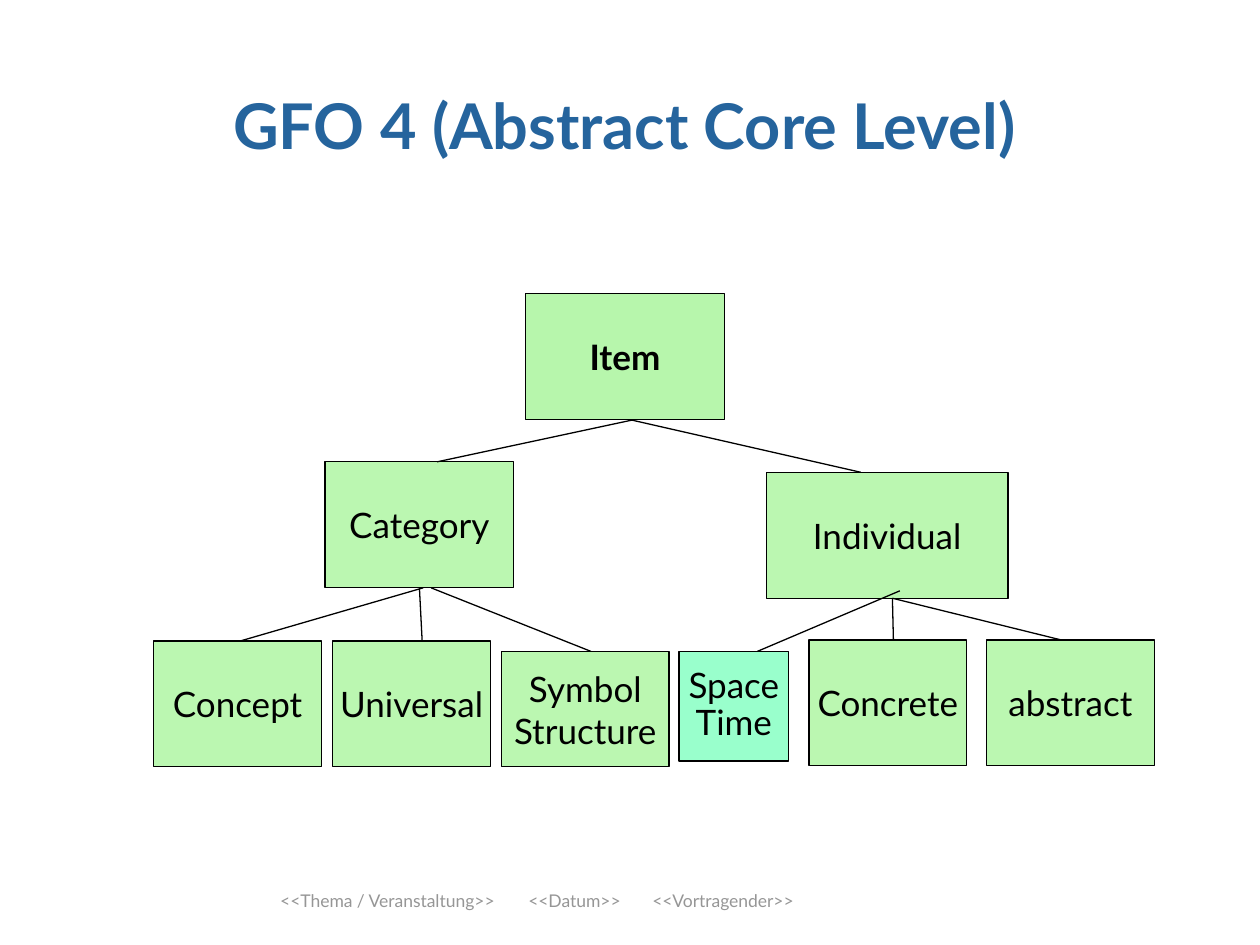
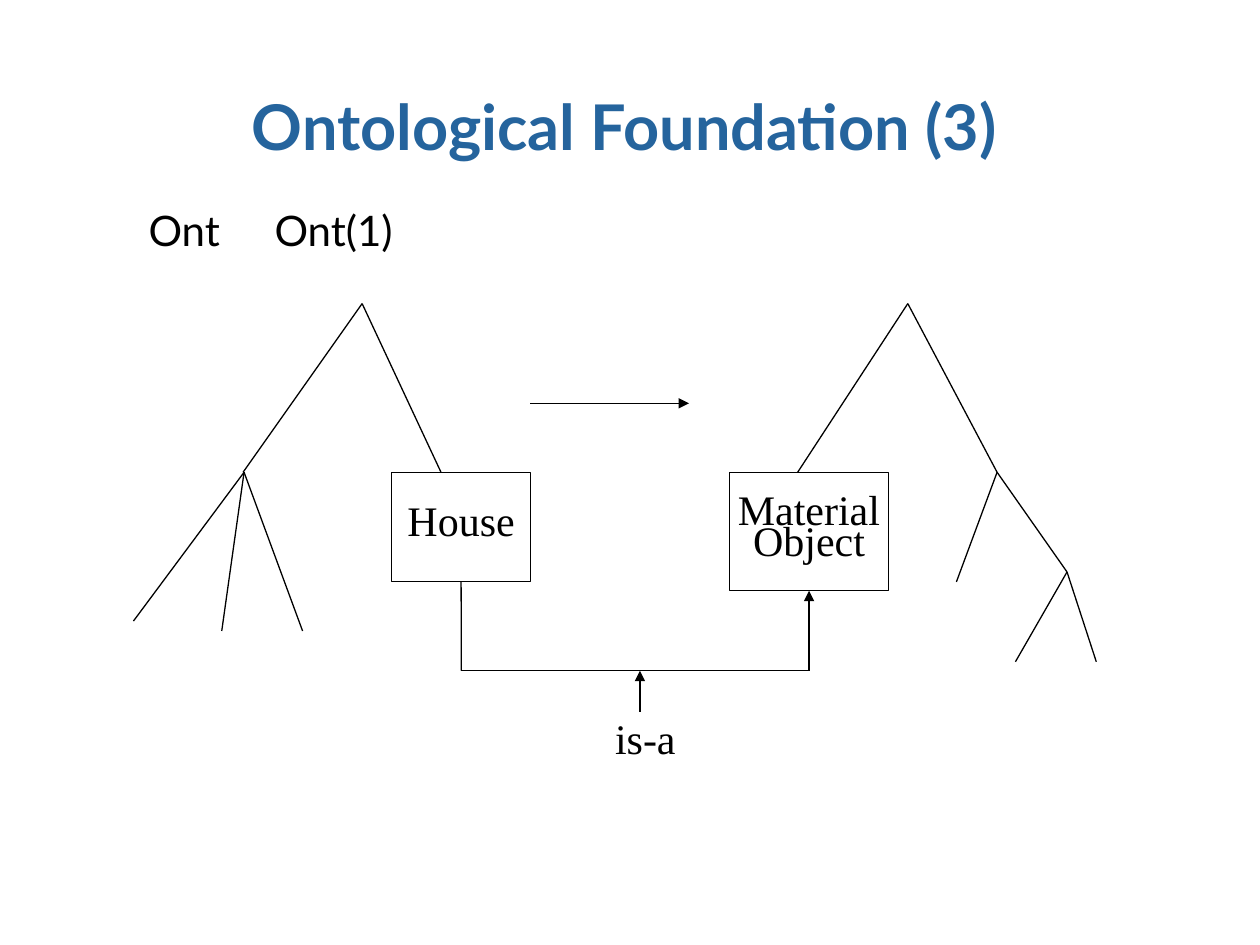
from dataclasses import dataclass

from lxml.etree import SubElement as Sub
from pptx import Presentation
from pptx.dml.color import RGBColor
from pptx.enum.shapes import MSO_CONNECTOR as Conn, MSO_SHAPE as Shape
from pptx.enum.text import MSO_ANCHOR as Anchor, MSO_AUTO_SIZE as Auto, PP_ALIGN as Align
from pptx.oxml.ns import qn
from pptx.util import Cm, Pt

BLUE = RGBColor(0x25, 0x64, 0x9D)
GREY = RGBColor(0x96, 0x96, 0x96)
BLACK = RGBColor(0, 0, 0)
WHITE = RGBColor(0xFF, 0xFF, 0xFF)
LIME = RGBColor(0xB7, 0xF6, 0xAC)
GREEN = RGBColor(0xBB, 0xF7, 0xB1)
MINT = RGBColor(0x99, 0xFF, 0xCC)
SANS, SERIF = "Lato", "Times New Roman"
BOTTOM = 2


def style(para, size, name=SANS, color=BLACK, bold=False, align=Align.CENTER, gap=None):
    """Format one paragraph."""
    para.alignment = align
    if gap:
        para.line_spacing = gap
    font = para.font
    font.size, font.name, font.bold = Pt(size), name, bold
    font.color.rgb = color


def place(shape, left, top, width, height):
    """Move and size a shape, in centimetres."""
    shape.left, shape.top = Cm(left), Cm(top)
    shape.width, shape.height = Cm(width), Cm(height)


def stops(para, *spots):
    """Set left tab stops, in centimetres."""
    tabs = Sub(para._p.get_or_add_pPr(), qn("a:tabLst"))
    for spot in spots:
        Sub(tabs, qn("a:tab"), pos=str(Cm(spot)), algn="l")


@dataclass
class Area:
    """A region of a slide whose parts are placed from its top left corner."""
    slide: object
    left: float
    top: float

    def box(self, text, x, y, width, height, fill=GREEN, edge=BLACK, **font):
        """Add a labelled rectangle."""
        rect = self.slide.shapes.add_shape(
            Shape.RECTANGLE, Cm(self.left + x), Cm(self.top + y), Cm(width), Cm(height))
        rect.shadow.inherit = False
        rect.fill.solid()
        rect.fill.fore_color.rgb = fill
        rect.line.color.rgb = edge
        rect.line.width = Pt(0.75)
        frame = rect.text_frame
        frame.text = text
        frame.word_wrap = False
        frame.vertical_anchor = Anchor.MIDDLE
        for para in frame.paragraphs:
            style(para, **font)
        return rect

    def line(self, start, end, first=None, last=None, arrow=False):
        """Draw a line, joined to the bottom of the given boxes."""
        ends = [Cm(base + part) for point in (start, end)
                for base, part in zip((self.left, self.top), point)]
        line = self.slide.shapes.add_connector(Conn.STRAIGHT, *ends)
        line.line.color.rgb = BLACK
        line.line.width = Pt(0.75)
        if first is not None:
            line.begin_connect(first, BOTTOM)
        if last is not None:
            line.end_connect(last, BOTTOM)
        if arrow:
            Sub(line.line._get_or_add_ln(), qn("a:tailEnd"), type="triangle")
        Sub(line._element.spPr, qn("a:effectLst"))

    def fan(self, root, *tips):
        """Draw lines from one root to several tips."""
        for tip in tips:
            self.line(root, tip)


def head(slide, text, top, height, gap=None):
    """Fill the title."""
    title = slide.shapes.title
    place(title, 1.07, top, 23.03, height)
    frame = title.text_frame
    frame.text = text
    frame.auto_size = Auto.NONE
    frame.vertical_anchor = Anchor.BOTTOM
    style(frame.paragraphs[0], 36, color=BLUE, bold=True, gap=gap)


def foot(slide):
    """Add the footer line."""
    note = slide.shapes.add_textbox(Cm(3.89), Cm(17.81), Cm(13.87), Cm(0.69))
    frame = note.text_frame
    frame.text = "<<Thema / Veranstaltung>>\t<<Datum>>\t<<Vortragender>>"
    frame.word_wrap = True
    frame.vertical_anchor = Anchor.BOTTOM
    para = frame.paragraphs[0]
    stops(para, 5, 7.5)
    style(para, 10, color=GREY)


def tree(area):
    """Draw the hierarchy of items."""
    area.box("Item", 7.49, 0, 4.02, 2.54, LIME, size=20, bold=True)
    group = area.box("Category", 3.45, 3.39, 3.81, 2.54, size=20)
    for text, x, y, width, height in (
            ("Individual", 12.35, 3.6, 4.87, 2.54),
            ("Concept", 0, 7, 3.38, 2.54),
            ("Universal", 3.61, 7, 3.18, 2.54),
            ("Symbol\nStructure", 7.01, 7.21, 3.38, 2.33),
            ("Concrete", 13.21, 6.98, 3.18, 2.54),
            ("abstract", 16.79, 6.98, 3.38, 2.54)):
        area.box(text, x, y, width, height, size=20)
    area.line((9.68, 2.54), (5.71, 3.39))
    area.line((9.6, 2.54), (14.25, 3.6))
    area.line((5.43, 5.93), (1.75, 7))
    area.line((5.36, 5.93), (5.41, 7), first=group)
    area.line((5.59, 5.93), (8.81, 7.21))
    area.fan((14.89, 6.14), (14.91, 6.98), (18.29, 6.98))
    area.line((15.04, 5.99), (12.17, 7.21))
    area.box("Space\nTime", 10.59, 7.21, 2.21, 2.21, MINT, size=20, gap=0.86)


def names(slide):
    """Fill the body with the names of both ontologies."""
    body = slide.placeholders[1]
    place(body, 1.47, 4.24, 22.38, 13.13)
    frame = body.text_frame
    frame.text = "\tOnt\tOnt(1)"
    frame.auto_size = Auto.NONE
    para = frame.paragraphs[0]
    para.space_before = Pt(0)
    props = para._p.get_or_add_pPr()
    props.set("marL", "0")
    props.set("indent", "0")
    Sub(props, qn("a:buNone"))
    stops(para, 3.25, 12.5)
    style(para, 24, align=Align.LEFT, gap=0.73)


def term(area, text, *spot, edge=BLACK):
    """Add a white box with a serif term."""
    return area.box(text, *spot, fill=WHITE, edge=edge, size=24, name=SERIF, gap=0.63)


def source(area):
    """Draw the left tree and return its box."""
    area.fan((4.61, 0), (2.21, 3.4), (6.2, 3.4))
    area.fan((2.23, 3.4), (0, 6.4), (1.78, 6.6), (3.41, 6.6))
    return term(area, "House", 5.21, 3.4, 2.79, 2.21)


def target(area):
    """Draw the right tree and return its box."""
    area.fan((3.59, 0), (1.37, 3.4), (5.39, 3.4))
    area.fan((5.39, 3.4), (4.57, 5.61), (6.8, 5.41))
    area.fan((6.8, 5.41), (5.76, 7.22), (7.39, 7.22))
    return term(area, "Material\nObject", 0, 3.4, 3.2, 2.39)


def bridge(area, house, thing):
    """Draw the relation below the two boxes."""
    area.line((0, 0), (0, 1.79), first=house)
    area.line((0, 1.79), (7.01, 1.79))
    area.line((7.01, 1.79), (7.01, 0.18), last=thing, arrow=True)
    term(area, "is-a", 2.21, 2.8, 3, 0.99, edge=WHITE)
    area.line((3.6, 2.62), (3.6, 1.79), arrow=True)


def core(deck):
    """Build the slide with the core level."""
    slide = deck.slides.add_slide(deck.slide_layouts[5])
    head(slide, "GFO 4 (Abstract Core Level)", 0.43, 2.97)
    foot(slide)
    tree(Area(slide, 3.1, 5.92))


def base(deck):
    """Build the slide with the foundation."""
    slide = deck.slides.add_slide(deck.slide_layouts[1])
    head(slide, "Ontological Foundation (3)", -0.48, 3.86, gap=0.73)
    names(slide)
    house = source(Area(slide, 2.69, 6.12))
    thing = target(Area(slide, 14.71, 6.12))
    Area(slide, 10.69, 8.13).line((0, 0), (3.2, 0), arrow=True)
    bridge(Area(slide, 9.3, 11.73), house, thing)


def main():
    """Build and save the slides."""
    deck = Presentation()
    deck.slide_width, deck.slide_height = Cm(25.4), Cm(19.05)
    core(deck)
    base(deck)
    deck.save("out.pptx")


if __name__ == "__main__":
    main()
